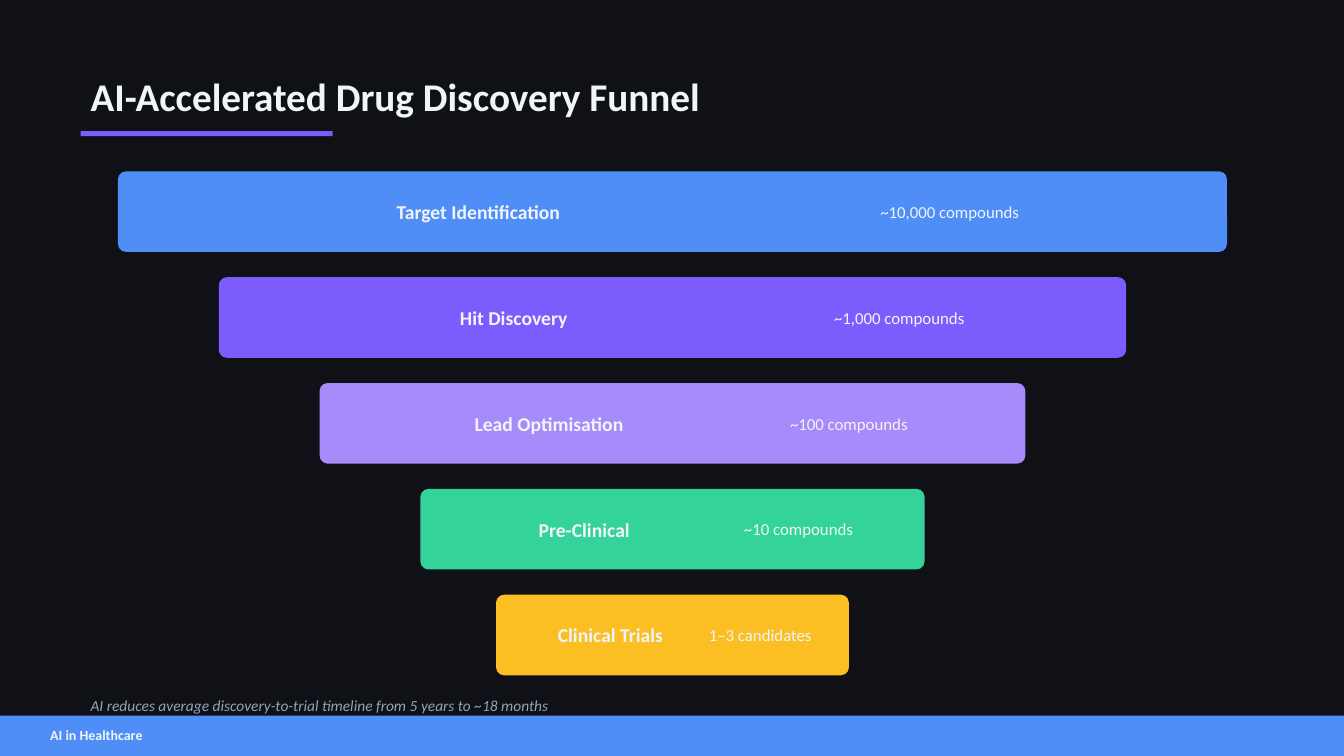
from dataclasses import dataclass

from pptx import Presentation
from pptx.dml.color import RGBColor
from pptx.enum.shapes import MSO_SHAPE
from pptx.enum.text import MSO_ANCHOR, MSO_AUTO_SIZE, PP_ALIGN
from pptx.util import Emu, Pt

RECT, ROUNDED = MSO_SHAPE.RECTANGLE, MSO_SHAPE.ROUNDED_RECTANGLE
LEFT, CENTER = PP_ALIGN.LEFT, PP_ALIGN.CENTER
MIDDLE = MSO_ANCHOR.MIDDLE
NO_FIT = MSO_AUTO_SIZE.NONE

EMU_PER_PX = 9144  # 100 px to the inch
SLIDE_W, SLIDE_H = 1333, 750
FONT = "Calibri"
BACKGROUND, LIGHT, MUTED = "0F1117", "F1F5F9", "94A3B8"
BLUE, VIOLET, LILAC, GREEN, AMBER = "4F8EF7", "7C5CFC", "A78BFA", "34D399", "FBBF24"
FUNNEL_TOP, BAR_H, BAR_STEP, BAR_PAD = 170, 80, 105, 10

TITLE = {"size": Pt(28), "bold": True}
STAGE_NAME = {"size": Pt(14), "bold": True}
STAGE_COUNT = {"size": Pt(12), "bold": False}
NOTE = {"size": Pt(11), "italic": True}
FOOTER = {"size": Pt(10), "bold": True}


@dataclass(frozen=True)
class Box:
    x: int
    y: int
    w: int
    h: int

    def emu(self) -> list[Emu]:
        return [Emu(n * EMU_PER_PX) for n in (self.x, self.y, self.w, self.h)]


@dataclass(frozen=True)
class Stage:
    name: str
    count: str
    width: int
    color: str


STAGES = [
    Stage("Target Identification", "~10,000 compounds", 1100, BLUE),
    Stage("Hit Discovery", "~1,000 compounds", 900, VIOLET),
    Stage("Lead Optimisation", "~100 compounds", 700, LILAC),
    Stage("Pre-Clinical", "~10 compounds", 500, GREEN),
    Stage("Clinical Trials", "1–3 candidates", 350, AMBER),
]


def rgb(color: str) -> RGBColor:
    return RGBColor.from_string(color)


def write(sp, text: str, style: dict, color: str = LIGHT, align=LEFT) -> None:
    tf = sp.text_frame
    for key, value in {"word_wrap": True, "auto_size": NO_FIT, "vertical_anchor": MIDDLE}.items():
        setattr(tf, key, value)
    p = tf.paragraphs[0]
    p.alignment = align
    r = p.add_run()
    r.text = text
    for key, value in {"name": FONT, **style}.items():
        setattr(r.font, key, value)
    r.font.color.rgb = rgb(color)


def add_label(slide, box: Box, text: str, style: dict, color: str = LIGHT, align=LEFT) -> None:
    write(slide.shapes.add_textbox(*box.emu()), text, style, color, align)


def add_block(slide, box: Box, color: str, kind=RECT):
    sp = slide.shapes.add_shape(kind, *box.emu())
    sp.shadow.inherit = False
    sp.fill.solid()
    sp.fill.fore_color.rgb = rgb(color)
    sp.line.fill.background()
    return sp


def add_title(slide, box: Box, text: str) -> None:
    sp = slide.shapes.title
    sp.left, sp.top, sp.width, sp.height = box.emu()
    write(sp, text, TITLE)


def add_stage(slide, stage: Stage, row: int) -> None:
    w = stage.width
    x, y = (SLIDE_W - w + 1) // 2, FUNNEL_TOP + row * BAR_STEP
    bar = add_block(slide, Box(x, y, w, BAR_H), stage.color, ROUNDED)
    bar.adjustments[0] = 0.1
    text_y, text_h = y + BAR_PAD, BAR_H - 2 * BAR_PAD
    name_box = Box(x, text_y, w * 65 // 100, text_h)
    count_box = Box(x + w * 55 // 100, text_y, w * 40 // 100, text_h)
    add_label(slide, name_box, stage.name, STAGE_NAME, align=CENTER)
    add_label(slide, count_box, stage.count, STAGE_COUNT, align=CENTER)


def main() -> None:
    prs = Presentation()
    prs.slide_width, prs.slide_height = Emu(SLIDE_W * EMU_PER_PX), Emu(SLIDE_H * EMU_PER_PX)
    slide = prs.slides.add_slide(prs.slide_layouts.get_by_name("Title Only"))
    slide.background.fill.solid()
    slide.background.fill.fore_color.rgb = rgb(BACKGROUND)

    add_title(slide, Box(80, 50, 1000, 90), "AI-Accelerated Drug Discovery Funnel")
    add_block(slide, Box(80, 130, 250, 5), VIOLET)
    for row, stage in enumerate(STAGES):
        add_stage(slide, stage, row)
    add_label(slide, Box(80, 680, 1000, 40),
              "AI reduces average discovery-to-trial timeline from 5 years to ~18 months", NOTE, MUTED)
    add_block(slide, Box(0, 710, SLIDE_W, 40), BLUE)
    add_label(slide, Box(40, 712, 600, 35), "AI in Healthcare", FOOTER)
    prs.save("out.pptx")


if __name__ == "__main__":
    main()
